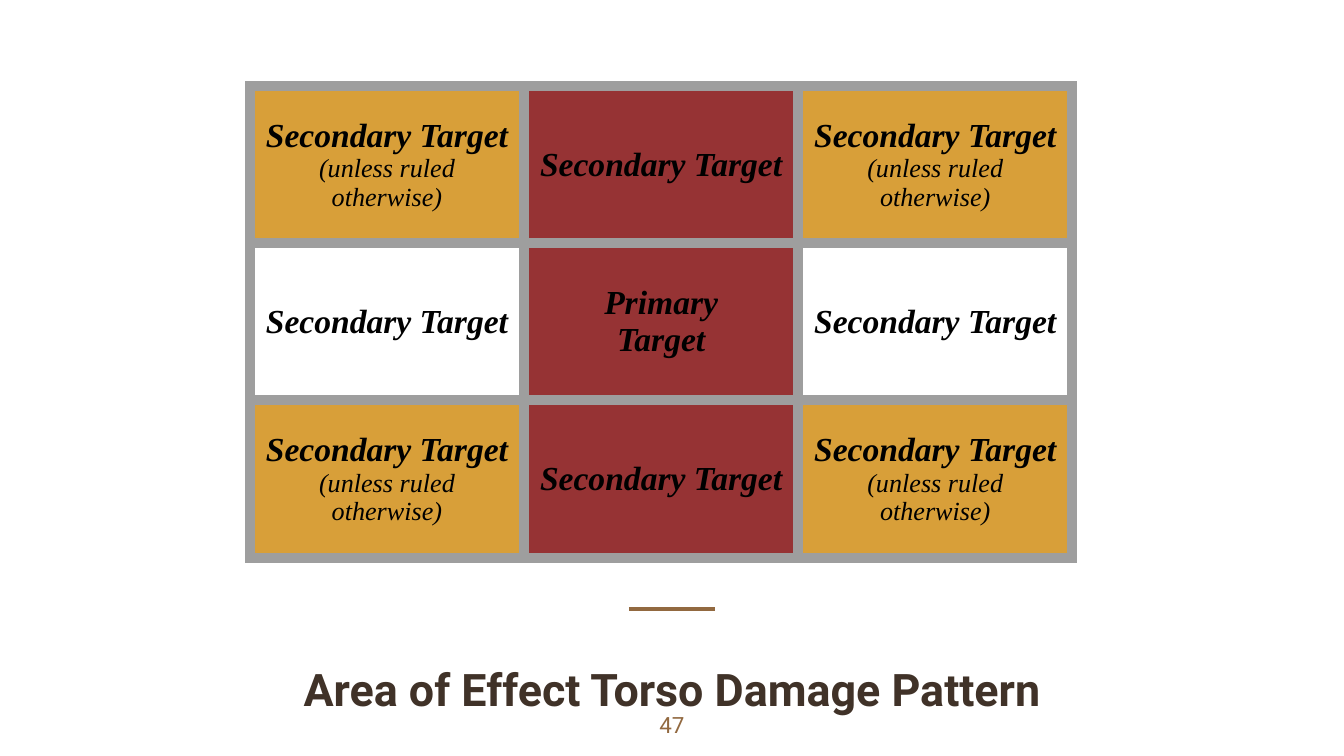
"""Build the slide showing the area of effect torso damage pattern."""
from lxml import etree
from pptx import Presentation
from pptx.dml.color import RGBColor
from pptx.enum.shapes import MSO_CONNECTOR
from pptx.enum.text import MSO_ANCHOR, MSO_AUTO_SIZE, PP_ALIGN
from pptx.oxml import parse_xml
from pptx.oxml.ns import qn
from pptx.util import Inches, Pt

AMBER = RGBColor(0xD8, 0x9F, 0x39)
RED = RGBColor(0x96, 0x33, 0x34)
BLACK = RGBColor(0, 0, 0)
BROWN = RGBColor(0x40, 0x32, 0x28)
BRONZE = RGBColor(0x92, 0x69, 0x40)
BORDER = (
    '<a:{} xmlns:a="http://schemas.openxmlformats.org/drawingml/2006/main" w="76200">'
    '<a:solidFill><a:srgbClr val="9E9E9E"/></a:solidFill></a:{}>'
)


def set_font(p, name, size, color, bold=False, italic=False):
    p.alignment = PP_ALIGN.CENTER
    for r in p.runs:
        r.font.name = name
        r.font.size = Pt(size)
        r.font.color.rgb = color
        r.font.bold = bold
        r.font.italic = italic


def set_frame(tf):
    tf.word_wrap = True
    tf.auto_size = MSO_AUTO_SIZE.NONE
    tf.vertical_anchor = MSO_ANCHOR.TOP
    tf.margin_left = tf.margin_right = tf.margin_top = tf.margin_bottom = Inches(0.1)


prs = Presentation()
prs.slide_width = Inches(10)
prs.slide_height = Inches(10) * 9 // 16
s = prs.slides.add_slide(prs.slide_layouts[5])

rule = s.shapes.add_connector(
    MSO_CONNECTOR.STRAIGHT, Inches(4.68), Inches(4.53), Inches(5.32), Inches(4.53)
)
rule.line.color.rgb = BRONZE
rule.line.width = Pt(2.25)
etree.SubElement(rule._element.spPr, qn("a:effectLst"))

title = s.shapes.title
title.left, title.top = Inches(0.5), Inches(4.82)
title.width, title.height = Inches(9), Inches(0.57)
title.text_frame.text = "Area of Effect Torso Damage Pattern"
set_frame(title.text_frame)
set_font(title.text_frame.paragraphs[0], "Roboto", 24, BROWN, bold=True)

number = s.shapes.add_textbox(Inches(4.7), Inches(5.19), Inches(0.6), Inches(0.43))
number.text_frame.text = "47"
set_frame(number.text_frame)
set_font(number.text_frame.paragraphs[0], "Roboto", 12, BRONZE)

secondary = ("Secondary Target", None)
corner = ("Secondary Target\n(unless ruled otherwise)", AMBER)
middle = ("Secondary Target", RED)
primary = ("Primary\nTarget", RED)
grid = [
    [corner, middle, corner],
    [secondary, primary, secondary],
    [corner, middle, corner],
]

frame = s.shapes.add_table(
    3, 3, Inches(1.86), Inches(0.64), Inches(6.12), Inches(3.51)
)
table = frame.table
table.first_row = table.horz_banding = False
for row, targets in zip(table.rows, grid):
    row.height = Inches(1.17)
    for cell, (text, color) in zip(row.cells, targets):
        cell.margin_left = cell.margin_right = Inches(0.1)
        cell.margin_top = cell.margin_bottom = Inches(0.1)
        cell.vertical_anchor = MSO_ANCHOR.MIDDLE
        tcPr = cell._tc.get_or_add_tcPr()
        for side in ("lnL", "lnR", "lnT", "lnB"):
            tcPr.append(parse_xml(BORDER.format(side, side)))
        if color is None:
            cell.fill.background()
        else:
            cell.fill.solid()
            cell.fill.fore_color.rgb = color
        cell.text_frame.text = text
        for p in cell.text_frame.paragraphs:
            note = p.text.startswith("(")
            set_font(p, "Times New Roman", 14 if note else 18, BLACK, not note, True)

prs.save("out.pptx")
